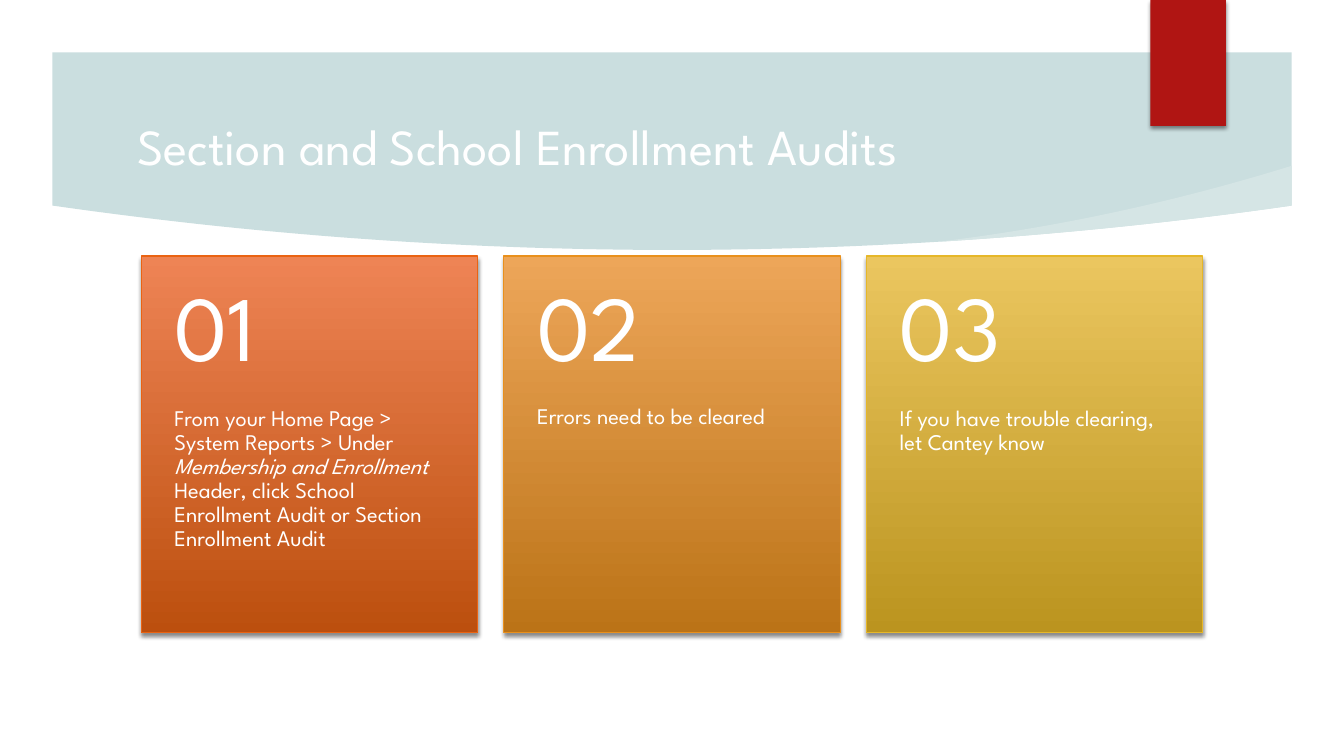
from lxml.etree import SubElement
from pptx import Presentation
from pptx.dml.color import RGBColor
from pptx.enum.shapes import MSO_SHAPE
from pptx.enum.text import MSO_ANCHOR, PP_ALIGN
from pptx.oxml.ns import qn
from pptx.util import Inches, Pt

FONT = "League Spartan"
WHITE = RGBColor(0xFF, 0xFF, 0xFF)
BANNER = RGBColor(0xCA, 0xDE, 0xDF)
SWOOSH = RGBColor(0xD5, 0xE5, 0xE5)
RED = RGBColor(0xB0, 0x15, 0x13)
ORANGE = [RGBColor(0xEE, 0x84, 0x55), RGBColor(0xBC, 0x4F, 0x0E), RGBColor(0xEA, 0x63, 0x12)]
AMBER = [RGBColor(0xED, 0xA6, 0x59), RGBColor(0xBB, 0x73, 0x17), RGBColor(0xE9, 0x90, 0x1C)]
GOLD = [RGBColor(0xEB, 0xC6, 0x5F), RGBColor(0xBB, 0x94, 0x1F), RGBColor(0xE6, 0xB7, 0x29)]

TITLE = "Section and School Enrollment Audits"
STEPS = [
    (ORANGE, 0.9, [("From your Home Page > System Reports > Under ", False),
                   ("Membership and Enrollment ", True),
                   ("Header, click School Enrollment Audit or Section Enrollment Audit", False)]),
    (AMBER, 1.0, [("Errors need to be cleared", False)]),
    (GOLD, 0.9, [("If you have trouble clearing, let Cantey know", False)]),
]


def add_shadow(sp):
    """Give a shape a soft shadow that falls straight down."""
    sp.shadow.inherit = False
    effects = sp._element.spPr.find(qn("a:effectLst"))
    shadow = SubElement(effects, qn("a:outerShdw"), blurRad=str(Pt(3)), dist=str(Pt(2)),
                        dir="5400000", algn="ctr", rotWithShape="0")
    color = SubElement(shadow, qn("a:srgbClr"), val="000000")
    SubElement(color, qn("a:alpha"), val="45000")


def add_outline(s, points, color):
    """Draw a closed, filled outline through points given in inches."""
    points = [(Inches(x), Inches(y)) for x, y in points]
    builder = s.shapes.build_freeform(*points[0])
    builder.add_line_segments(points[1:], close=True)
    sp = builder.convert_to_shape()
    sp.shadow.inherit = False
    sp.fill.solid()
    sp.fill.fore_color.rgb = color
    sp.line.fill.background()


def add_banner(s, x, y, w, h):
    """Draw the banner with its bowed lower edge and the lighter swoosh."""
    sag, steps = 0.44, 60

    def edge(px):
        """Return the height of the lower edge at px."""
        t = (px - x - w / 2) / (w / 2)
        return y + h - sag * t * t

    lower = [(x + w * i / steps, edge(x + w * i / steps)) for i in range(steps + 1)]
    add_outline(s, [(x + w, y), (x, y)] + lower, BANNER)

    start = x + w - 3.51
    reach = [3.51 * i / steps for i in range(steps + 1)]
    upper = [(start + u, edge(start) - 0.12 * u - 0.027 * u * u) for u in reach]
    below = [(start + u, edge(start + u)) for u in reversed(reach)]
    add_outline(s, upper + below, SWOOSH)


def add_tab(s, x, y, w, h):
    """Draw the red tab that hangs from the top edge."""
    sp = s.shapes.add_shape(MSO_SHAPE.RECTANGLE, Inches(x), Inches(y), Inches(w), Inches(h))
    sp.fill.solid()
    sp.fill.fore_color.rgb = RED
    sp.line.fill.background()
    add_shadow(sp)


def add_title(s, x, y, w, h):
    """Place the title placeholder in front of the banner."""
    sp = s.shapes.title
    s.shapes.element.append(sp.element)
    sp.left, sp.top, sp.width, sp.height = Inches(x), Inches(y), Inches(w), Inches(h)
    tf = sp.text_frame
    tf.text = TITLE
    tf.vertical_anchor = MSO_ANCHOR.MIDDLE
    p = tf.paragraphs[0]
    p.alignment = PP_ALIGN.LEFT
    p.font.name, p.font.size, p.font.color.rgb = FONT, Pt(36), WHITE


def add_label(s, x, y, w, h, runs, size, spacing, anchor, top, bottom):
    """Add white text in a box with wide side margins."""
    tf = s.shapes.add_textbox(Inches(x), Inches(y), Inches(w), Inches(h)).text_frame
    tf.word_wrap = True
    tf.vertical_anchor = anchor
    tf.margin_left = tf.margin_right = Inches(0.33)
    tf.margin_top, tf.margin_bottom = Inches(top), Inches(bottom)
    p = tf.paragraphs[0]
    p.line_spacing = spacing
    p.font.name, p.font.size, p.font.color.rgb = FONT, Pt(size), WHITE
    for text, italic in runs:
        r = p.add_run()
        r.text = text
        if italic:
            r.font.italic = True


def add_card(s, x, y, w, h, number, colors, spacing, runs):
    """Draw one numbered card: gradient panel, number and instruction."""
    light, dark, border = colors
    sp = s.shapes.add_shape(MSO_SHAPE.RECTANGLE, Inches(x), Inches(y), Inches(w), Inches(h))
    sp.fill.gradient()
    sp.fill.gradient_angle = 270
    for stop, color, position in zip(sp.fill.gradient_stops, (light, dark), (0, 1)):
        stop.color.rgb = color
        stop.position = position
    sp.line.color.rgb = border
    sp.line.width = Pt(0.75)
    add_shadow(sp)
    head = 0.4 * h
    add_label(s, x, y + head, w, h - head, runs, 16, spacing, MSO_ANCHOR.TOP, 0, 0.36)
    add_label(s, x, y, w, head, [(f"{number:02}", False)], 66, 0.9, MSO_ANCHOR.MIDDLE, 0.18, 0.18)


def add_cards(s, x, y, w, h, gap):
    """Lay out the cards in one row of equal columns."""
    card_w = (w - gap * (len(STEPS) - 1)) / len(STEPS)
    for i, (colors, spacing, runs) in enumerate(STEPS):
        add_card(s, x + i * (card_w + gap), y, card_w, h, i + 1, colors, spacing, runs)


def main():
    """Build the slide and save it."""
    prs = Presentation()
    prs.slide_width, prs.slide_height = Inches(13.33), Inches(7.5)
    s = prs.slides.add_slide(prs.slide_layouts[5])
    add_banner(s, 0.52, 0.52, 12.29, 1.96)
    add_tab(s, 11.41, 0, 0.75, 1.25)
    add_title(s, 1.26, 1.06, 9.65, 0.77)
    add_cards(s, 1.4, 2.54, 10.53, 3.74, 0.26)
    prs.save("out.pptx")


if __name__ == "__main__":
    main()
